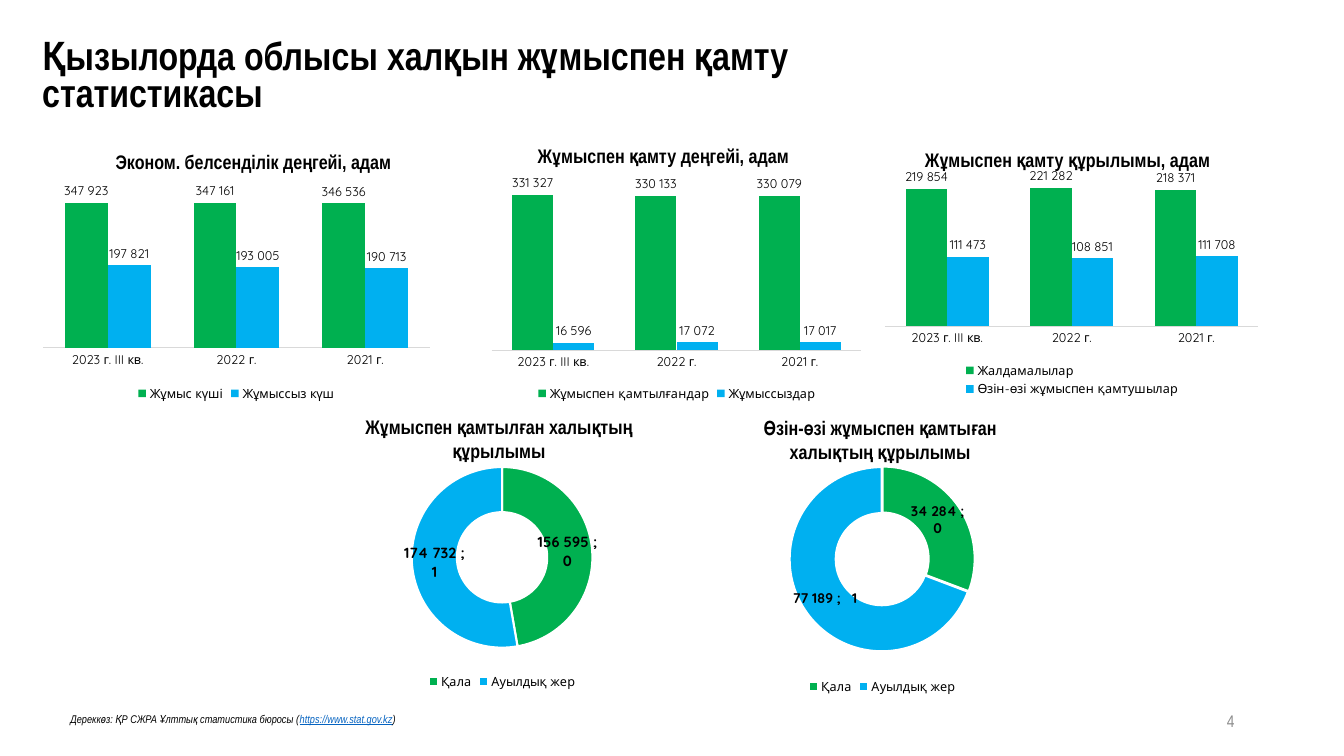
from lxml.etree import SubElement
from pptx import Presentation
from pptx.chart.data import CategoryChartData
from pptx.dml.color import RGBColor
from pptx.enum.chart import XL_CHART_TYPE, XL_LABEL_POSITION, XL_LEGEND_POSITION, XL_TICK_LABEL_POSITION, XL_TICK_MARK
from pptx.enum.text import MSO_ANCHOR, MSO_AUTO_SIZE, PP_ALIGN
from pptx.oxml.ns import qn
from pptx.util import Inches, Pt

COLORS = {
    "text": "000000", "link": "0563C1", "number": "8C8C8C", "axis": "D9D9D9",
    "green": "00B050", "blue": "00B0F0", "white": "FFFFFF",
}
SERIES_COLORS = ["green", "blue"]
TEXT_FONT = "Arial Narrow"
CHART_FONT = "Quicksand"
NUMBER_FORMAT = r'_-* #\ ##0_-;\-* #\ ##0_-;_-* "-"??_-;_-'

TITLE = "Қызылорда облысы халқын жұмыспен қамту статистикасы"
SOURCE = [
    ("Дереккөз: ҚР СЖРА Ұлттық статистика бюросы (", "text"),
    ("https://www.stat.gov.kz", "link"),
    (")", "text"),
]
PAGE_NUMBER = "4"
HEADINGS = [
    ("Эконом. белсенділік деңгейі, адам", (0.6, 1.44, 3.83, 0.34)),
    ("Жұмыспен қамту деңгейі, адам", (4.93, 1.38, 3.3, 0.34)),
    ("Жұмыспен қамту құрылымы, адам", (8.96, 1.42, 3.26, 0.34)),
    ("Жұмыспен қамтылған халықтың құрылымы", (3.38, 4.07, 3.14, 0.57)),
    ("Өзін-өзі жұмыспен қамтыған халықтың құрылымы", (7.34, 4.08, 2.78, 0.57)),
]
YEARS = ["2023 г. III кв.", "2022 г.", "2021 г."]
AREAS = ["Қала", "Ауылдық жер"]
COLUMN_CHARTS = [
    {"box": (0.35, 1.75, 3.99, 2.27), "plot": (0.02, 0.02, 0.96, 0.73), "maximum": 400000,
     "series": {"Жұмыс күші": (347923, 347161, 346536),
                "Жұмыссыз күш": (197821, 193005, 190713)}},
    {"box": (4.8, 1.74, 3.82, 2.28), "plot": (0.02, 0.04, 0.96, 0.72), "maximum": 350000,
     "series": {"Жұмыспен қамтылғандар": (331327, 330133, 330079),
                "Жұмыссыздар": (16596, 17072, 17017)}},
    {"box": (8.7, 1.64, 3.86, 2.35), "plot": (0.02, 0.02, 0.96, 0.66), "maximum": 250000,
     "legend": (0.2, 0.82, 0.6, 0.17),
     "series": {"Жалдамалылар": (219854, 221282, 218371),
                "Өзін-өзі жұмыспен қамтушылар": (111473, 108851, 111708)}},
]
DOUGHNUT_CHARTS = [
    {"box": (3.02, 4.49, 3.92, 2.39), "values": (156595, 174732), "label_size": 10.5, "explosion": 0},
    {"box": (6.7, 4.48, 4.1, 2.45), "values": (34284, 77189), "label_size": 10, "explosion": 1},
]
DOUGHNUT_PLOT = (0.27, 0.06, 0.46, 0.75)


def rgb(name):
    return RGBColor.from_string(COLORS[name])


def set_font(font, size, name=TEXT_FONT, color="text", bold=False, italic=False):
    font.size = Pt(size)
    font.name = name
    font.bold = bold
    font.italic = italic
    font.color.rgb = rgb(color)


def add_text(slide, box, text, size, anchor=MSO_ANCHOR.TOP, align=PP_ALIGN.LEFT, grow=False, **style):
    frame = slide.shapes.add_textbox(*map(Inches, box)).text_frame
    frame.word_wrap = True
    frame.vertical_anchor = anchor
    if grow:
        frame.auto_size = MSO_AUTO_SIZE.SHAPE_TO_FIT_TEXT
    paragraph = frame.paragraphs[0]
    paragraph.text = text
    paragraph.alignment = align
    set_font(paragraph.font, size, **style)
    return paragraph


def add_value(parent, tag, value):
    element = SubElement(parent, qn(f"c:{tag}"))
    element.set("val", str(value))
    return element


def set_layout(parent, index, box, inner=False):
    for old in parent.findall(qn("c:layout")):
        parent.remove(old)
    layout = SubElement(parent, qn("c:layout"))
    manual = SubElement(layout, qn("c:manualLayout"))
    if inner:
        add_value(manual, "layoutTarget", "inner")
    for mode in ("xMode", "yMode"):
        add_value(manual, mode, "edge")
    for side, value in zip("xywh", box):
        add_value(manual, side, value)
    parent.insert(index, layout)


def add_chart(slide, kind, box, categories, series, plot_box, size):
    data = CategoryChartData(number_format=NUMBER_FORMAT)
    data.categories = categories
    for name, values in series.items():
        data.add_series(name, values)
    chart = slide.shapes.add_chart(kind, *map(Inches, box), data).chart
    chart.has_title = False
    set_font(chart.font, size, CHART_FONT)
    chart.has_legend = True
    chart.legend.position = XL_LEGEND_POSITION.BOTTOM
    chart.legend.include_in_layout = False
    set_font(chart.legend.font, 9, CHART_FONT)
    set_layout(chart.plots[0]._element.getparent(), 0, plot_box, inner=True)
    return chart


def add_labels(series, size, bold=False):
    labels = series.data_labels
    labels.show_value = True
    labels.number_format = NUMBER_FORMAT
    labels.number_format_is_linked = False
    set_font(labels.font, size, CHART_FONT, bold=bold)
    return labels


def add_column_chart(slide, content):
    chart = add_chart(slide, XL_CHART_TYPE.COLUMN_CLUSTERED, content["box"], YEARS,
                      content["series"], content["plot"], 9)
    if "legend" in content:
        set_layout(chart.legend._element, 1, content["legend"])
    plot = chart.plots[0]
    plot.gap_width = 100
    plot.overlap = 0
    plot.vary_by_categories = False
    chart.value_axis.visible = False
    chart.value_axis.has_major_gridlines = False
    chart.value_axis.minimum_scale = 0
    chart.value_axis.maximum_scale = content["maximum"]
    axis = chart.category_axis
    axis.major_tick_mark = XL_TICK_MARK.NONE
    axis.tick_label_position = XL_TICK_LABEL_POSITION.NEXT_TO_AXIS
    axis.format.line.color.rgb = rgb("axis")
    axis.format.line.width = Pt(0.75)
    set_font(axis.tick_labels.font, 9, CHART_FONT)
    for series, color in zip(plot.series, SERIES_COLORS):
        series.format.fill.solid()
        series.format.fill.fore_color.rgb = rgb(color)
        series.invert_if_negative = False
        add_labels(series, 9).position = XL_LABEL_POSITION.OUTSIDE_END


def add_doughnut_chart(slide, content):
    chart = add_chart(slide, XL_CHART_TYPE.DOUGHNUT, content["box"], AREAS,
                      {"Series 1": content["values"]}, DOUGHNUT_PLOT, 10)
    plot = chart.plots[0]
    plot.vary_by_categories = True
    plot._element.find(qn("c:holeSize")).set("val", "35")
    series = plot.series[0]
    for index, color in enumerate(SERIES_COLORS):
        point = series.points[index].format
        point.fill.solid()
        point.fill.fore_color.rgb = rgb(color)
        point.line.color.rgb = rgb("white")
        point.line.width = Pt(1.5)
    labels = add_labels(series, content["label_size"], bold=True)
    labels.show_percentage = True
    separator = SubElement(labels._element, qn("c:separator"))
    separator.text = "; "
    labels._element.find(qn("c:showBubbleSize")).addnext(separator)
    if content["explosion"]:
        explosion = add_value(series._element, "explosion", content["explosion"])
        series._element.find(qn("c:dPt")).addprevious(explosion)


def main():
    presentation = Presentation()
    presentation.slide_width = Inches(13.33)
    presentation.slide_height = Inches(7.5)
    slide = presentation.slides.add_slide(presentation.slide_layouts[6])
    add_text(slide, (12.07, 6.95, 0.69, 0.4), PAGE_NUMBER, 12, MSO_ANCHOR.MIDDLE, color="number")
    for text, box in HEADINGS:
        add_text(slide, box, text, 14, align=PP_ALIGN.CENTER, grow=True, bold=True)
    title = add_text(slide, (0.32, 0.33, 9.61, 0.88), TITLE, 28, MSO_ANCHOR.MIDDLE, bold=True)
    title.line_spacing = 0.8
    source = add_text(slide, (0.6, 7.02, 8.4, 0.24), "", 8, grow=True, italic=True)
    for text, color in SOURCE:
        run = source.add_run()
        run.text = text
        run.font.color.rgb = rgb(color)
        run.font.underline = color == "link"
    for content in COLUMN_CHARTS:
        add_column_chart(slide, content)
    for content in DOUGHNUT_CHARTS:
        add_doughnut_chart(slide, content)
    presentation.save("out.pptx")


if __name__ == "__main__":
    main()
